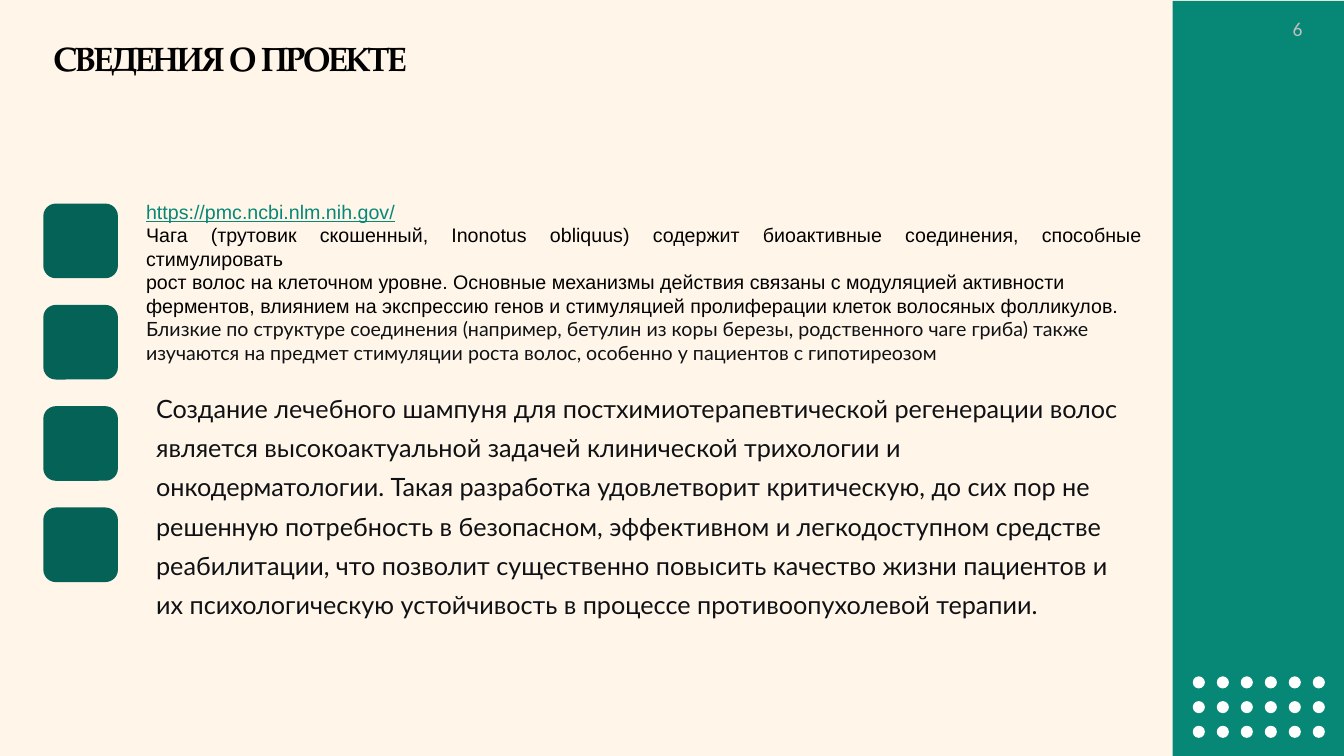
from pptx import Presentation
from pptx.dml.color import RGBColor
from pptx.enum.shapes import MSO_SHAPE as Shape
from pptx.enum.text import MSO_ANCHOR as Anchor, MSO_AUTO_SIZE as AutoSize, PP_ALIGN as Align
from pptx.util import Inches, Pt

CREAM = RGBColor(0xFF, 0xF6, 0xE9)
TEAL = RGBColor(0x07, 0x88, 0x77)
DARK_TEAL = RGBColor(0x05, 0x62, 0x56)
WHITE = RGBColor(0xFF, 0xFF, 0xFF)
BLACK = RGBColor(0, 0, 0)
INK = RGBColor(0x0F, 0x11, 0x15)
GREY = RGBColor(0xBF, 0xBF, 0xBF)

TITLE = "СВЕДЕНИЯ О ПРОЕКТЕ"
PAGE_NUMBER = "6"
SOURCE_LINK = "https://pmc.ncbi.nlm.nih.gov/"
MECHANISM = [
    ("Чага (трутовик скошенный, Inonotus obliquus) содержит биоактивные соединения, способные стимулировать", "Arial", BLACK),
    ("рост волос на клеточном уровне. Основные механизмы действия связаны с модуляцией активности", "Arial", BLACK),
    ("ферментов, влиянием на экспрессию генов и стимуляцией пролиферации клеток волосяных фолликулов.", "Arial", BLACK),
    ("Близкие по структуре соединения (например, бетулин из коры березы, родственного чаге гриба) также", "Lato", INK),
    ("изучаются на предмет стимуляции роста волос, особенно у пациентов с гипотиреозом", "Lato", INK),
]
RELEVANCE = (
    "Создание лечебного шампуня для постхимиотерапевтической регенерации волос "
    "является высокоактуальной задачей клинической трихологии и онкодерматологии. "
    "Такая разработка удовлетворит критическую, до сих пор не решенную потребность "
    "в безопасном, эффективном и легкодоступном средстве реабилитации, что позволит "
    "существенно повысить качество жизни пациентов и их психологическую устойчивость "
    "в процессе противоопухолевой терапии."
)

WIDTH, HEIGHT = 13.33, 7.5
MARGIN = 0.43
BAND_LEFT = 11.63
TILE_TOP, TILE_SIZE, TILE_STEP, TILE_COUNT = 2.02, 0.74, 1.005, 4
DOT_LEFT, DOT_TOP, DOT_SIZE = 11.83, 6.71, 0.12
DOT_COLUMNS, DOT_ROWS, DOT_STEP_X, DOT_STEP_Y = 6, 3, 0.238, 0.245


def add_block(page, kind, left, top, width, height, color):
    block = page.shapes.add_shape(kind, Inches(left), Inches(top), Inches(width), Inches(height))
    block.shadow.inherit = False
    block.fill.solid()
    block.fill.fore_color.rgb = color
    block.line.fill.background()
    return block


def add_text_box(page, left, top, width, height, grows=True):
    box = page.shapes.add_textbox(Inches(left), Inches(top), Inches(width), Inches(height))
    frame = box.text_frame
    frame.word_wrap = True
    frame.vertical_anchor = Anchor.TOP
    frame.auto_size = AutoSize.SHAPE_TO_FIT_TEXT if grows else AutoSize.NONE
    return frame


def add_span(para, text, size, font, color):
    span = para.add_run()
    span.text = text
    span.font.size = Pt(size)
    span.font.name = font
    span.font.color.rgb = color
    return span


def main():
    deck = Presentation()
    deck.slide_width, deck.slide_height = Inches(WIDTH), Inches(HEIGHT)
    page = deck.slides.add_slide(deck.slide_layouts[6])
    page.background.fill.solid()
    page.background.fill.fore_color.rgb = CREAM

    add_block(page, Shape.RECTANGLE, BAND_LEFT, 0.01, WIDTH - BAND_LEFT, HEIGHT, TEAL)

    para = add_text_box(page, MARGIN, 0.37, 7.41, 0.46).paragraphs[0]
    para.line_spacing = 0.9
    title = add_span(para, TITLE, 24, "TeX Gyre Pagella", BLACK)
    title.font.bold = True
    title.font._element.set("spc", "-100")

    for row in range(DOT_ROWS):
        for column in range(DOT_COLUMNS):
            add_block(page, Shape.OVAL, DOT_LEFT + column * DOT_STEP_X,
                      DOT_TOP + row * DOT_STEP_Y, DOT_SIZE, DOT_SIZE, WHITE)

    for row in range(TILE_COUNT):
        add_block(page, Shape.ROUNDED_RECTANGLE, MARGIN, TILE_TOP + row * TILE_STEP,
                  TILE_SIZE, TILE_SIZE, DARK_TEAL)

    para = add_text_box(page, 1.45, 3.76, 9.75, 2.46).paragraphs[0]
    para.line_spacing = 1.3
    add_span(para, RELEVANCE, 18, "Lato", INK)

    para = add_text_box(page, 12.51, 0.12, 0.72, 0.27, grows=False).paragraphs[0]
    para.alignment = Align.CENTER
    add_span(para, PAGE_NUMBER, 14, "Calibri", GREY)

    frame = add_text_box(page, 1.35, 1.93, 10.08, 1.51)
    link = add_span(frame.paragraphs[0], SOURCE_LINK, 14, "Arial", TEAL)
    link.font.underline = True
    for text, font, color in MECHANISM:
        para = frame.add_paragraph()
        para.alignment = Align.JUSTIFY
        add_span(para, text, 14, font, color)

    deck.save("out.pptx")


if __name__ == "__main__":
    main()
